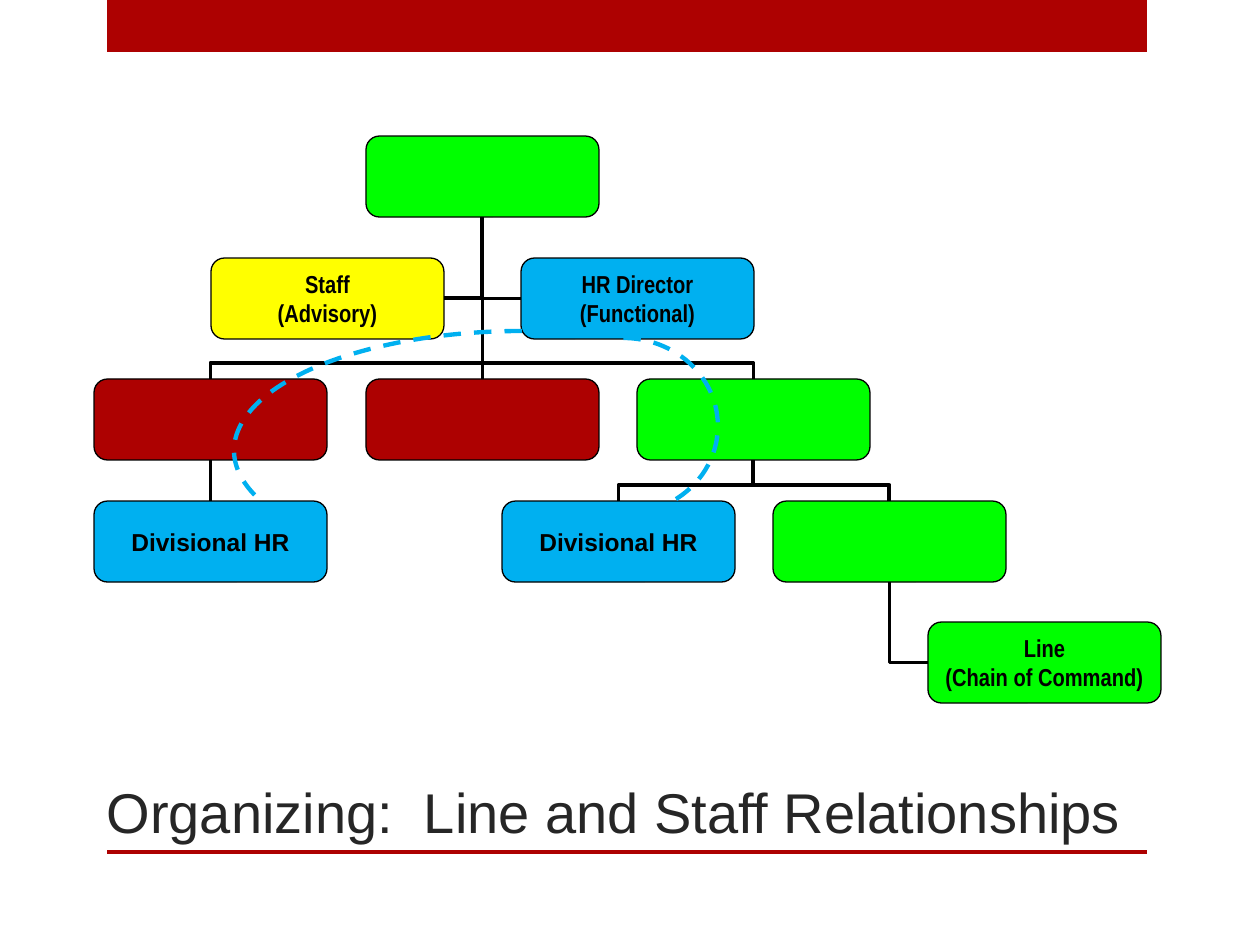
from lxml.etree import SubElement
from pptx import Presentation
from pptx.dml.color import RGBColor as Rgb
from pptx.enum.dml import MSO_LINE as Dash
from pptx.enum.shapes import MSO_CONNECTOR as Link, MSO_SHAPE as Shape
from pptx.enum.text import MSO_ANCHOR as Anchor, MSO_AUTO_SIZE as Fit, PP_ALIGN as Align
from pptx.oxml.ns import qn
from pptx.util import Pt

SCALE = 914400 / 126
COLORS = {"line": "00FF00", "staff": "FFFF00", "functional": "00B0F0",
          "division": "AD0101", "ink": "000000", "title": "262626"}
BOX_SIZE = (233, 81)
BUS_GAP = 16
BOXES = {
    "head": (272, 0, "line", ""),
    "staff": (117, 122, "staff", "Staff\n(Advisory)"),
    "director": (427, 122, "functional", "HR Director\n(Functional)"),
    "left division": (0, 243, "division", ""),
    "middle division": (272, 243, "division", ""),
    "right division": (543, 243, "line", ""),
    "left HR": (0, 365, "functional", "Divisional HR"),
    "right HR": (408, 365, "functional", "Divisional HR"),
    "unit": (679, 365, "line", ""),
    "command": (834, 486, "line", "Line\n(Chain of Command)"),
}
STRAIGHT = [("left division", "head", False), ("middle division", "head", True),
            ("right division", "head", False), ("left HR", "left division", True),
            ("right HR", "right division", False), ("unit", "right division", False)]
SIDEWAYS = [("staff", "head"), ("director", "head"), ("command", "unit")]
ARCS = [((435, 202, 189, 176), 33.905, False), ((140, 195, 576, 239), 7.03, True)]


def px(*lengths):
    """Turn pixel lengths into EMU."""
    return [round(length * SCALE) for length in lengths]


def paint(shape, fill, line=None, width=0.75):
    """Give a shape its fill and outline without a shadow."""
    shape.shadow.inherit = False
    if fill:
        shape.fill.solid()
        shape.fill.fore_color.rgb = Rgb.from_string(COLORS[fill])
    else:
        shape.fill.background()
    if line:
        shape.line.color.rgb = Rgb.from_string(COLORS[line])
        shape.line.width = Pt(width)
    else:
        shape.line.fill.background()


def style_text(frame, text, font, frame_format, align):
    """Write the text of a frame and apply its format values."""
    for name, value in frame_format.items():
        setattr(frame, name, value)
    frame.text = text
    for para in frame.paragraphs:
        para.alignment = align
        for span in para.runs:
            for name, value in font.items():
                setattr(span.font, name, value)


def add_band(page, area):
    """Add a plain red band filling the area."""
    paint(page.shapes.add_shape(Shape.RECTANGLE, *px(*area)), "division")


def add_title(page, area):
    """Place and format the title placeholder."""
    title = page.shapes.title
    for name, value in zip(("left", "top", "width", "height"), px(*area)):
        setattr(title, name, value)
    font = {"name": "Arial", "size": Pt(32), "bold": False}
    style_text(title.text_frame, "Organizing:  Line and Staff Relationships", font,
               {"vertical_anchor": Anchor.BOTTOM, "auto_size": Fit.NONE, "word_wrap": True},
               Align.LEFT)
    title.text_frame.paragraphs[0].runs[0].font.color.rgb = Rgb.from_string(COLORS["title"])


def add_box(page, left, top, role, text):
    """Add one rounded box of the chart."""
    box = page.shapes.add_shape(Shape.ROUNDED_RECTANGLE, *px(left, top, *BOX_SIZE))
    paint(box, role, "ink")
    if text:
        narrow = "\n" in text
        side, edge = px(10, 5) if narrow else px(13, 6)
        font = {"name": "Arial Narrow" if narrow else "Arial", "size": Pt(14), "bold": True}
        frame_format = {"vertical_anchor": Anchor.MIDDLE, "word_wrap": False,
                        "margin_left": side, "margin_right": side,
                        "margin_top": edge, "margin_bottom": edge}
        style_text(box.text_frame, text, font, frame_format, Align.CENTER)
        for para in box.text_frame.paragraphs:
            para.runs[0].font.color.rgb = Rgb.from_string(COLORS["ink"])
    return box


def add_link(page, kind, left, top, width, height):
    """Add a black connector spanning a frame."""
    link = page.shapes.add_connector(kind, left, top, left + width, top + height)
    link.line.color.rgb = Rgb.from_string(COLORS["ink"])
    link.line.width = Pt(2.25)
    SubElement(link.element.spPr, qn("a:effectLst"))
    return link


def bend(link, preset, transform, adjust=None):
    """Set the elbow preset, the turn and the bend of a connector."""
    for name, value in transform.items():
        link.element.spPr.xfrm.set(name, value)
    geometry = link.element.spPr.find(qn("a:prstGeom"))
    geometry.set("prst", preset)
    if adjust is not None:
        guides = geometry.find(qn("a:avLst"))
        if guides is None:
            guides = SubElement(geometry, qn("a:avLst"))
        SubElement(guides, qn("a:gd"), name="adj1", fmla=f"val {round(adjust * 100000)}")


def link_upward(page, child, parent, direct):
    """Join the top of a child to the bottom of its parent."""
    child_x, parent_x = (box.left + box.width // 2 for box in (child, parent))
    low, high = child.top, parent.top + parent.height
    if direct:
        link = add_link(page, Link.STRAIGHT, child_x, high, 0, low - high)
        link.begin_connect(child, 0)
        link.end_connect(parent, 2)
        return
    rise, run = low - high, abs(child_x - parent_x)
    left = (child_x + parent_x - rise) // 2
    top = (low + high - run) // 2
    link = add_link(page, Link.ELBOW, left, top, rise, run)
    turn = {"rot": "5400000", "flipH": "1"} if child_x > parent_x else {"rot": "16200000"}
    bend(link, "bentConnector3", turn, px(BUS_GAP)[0] / rise)


def link_sideways(page, child, parent):
    """Join the inner side of a child to the bottom of its parent."""
    parent_x = parent.left + parent.width // 2
    high = parent.top + parent.height
    drop = child.top + child.height // 2 - high
    if child.left > parent_x:
        link = add_link(page, Link.ELBOW, parent_x, high, child.left - parent_x, drop)
        bend(link, "bentConnector2", {"rot": "10800000"})
    else:
        edge = child.left + child.width
        link = add_link(page, Link.ELBOW, edge, high, parent_x - edge, drop)
        bend(link, "bentConnector2", {"flipV": "1"})


def add_arc(page, area, finish, mirrored):
    """Add a dashed arc of functional authority."""
    arc = page.shapes.add_shape(Shape.ARC, *px(*area))
    arc.adjustments[0], arc.adjustments[1] = 162, finish
    paint(arc, None, "functional", 2.5)
    arc.line.dash_style = Dash.DASH
    if mirrored:
        arc.element.spPr.xfrm.set("flipH", "1")


def add_chart_region(page, left, top):
    """Build the organization chart from its top left corner."""
    boxes = {name: add_box(page, left + x, top + y, role, text)
             for name, (x, y, role, text) in BOXES.items()}
    for child, parent, direct in STRAIGHT:
        link_upward(page, boxes[child], boxes[parent], direct)
    for child, parent in SIDEWAYS:
        link_sideways(page, boxes[child], boxes[parent])
    for (x, y, width, height), finish, mirrored in ARCS:
        add_arc(page, (left + x, top + y, width, height), finish, mirrored)


def main():
    """Build and save the deck."""
    deck = Presentation()
    deck.slide_width, deck.slide_height = px(1260, 945)
    page = deck.slides.add_slide(deck.slide_layouts[5])
    for area in ((107, 0, 1040, 52), (107, 850, 1040, 4)):
        add_band(page, area)
    add_title(page, (94, 766, 1071, 85))
    add_chart_region(page, 94, 136)
    deck.save("out.pptx")


if __name__ == "__main__":
    main()
